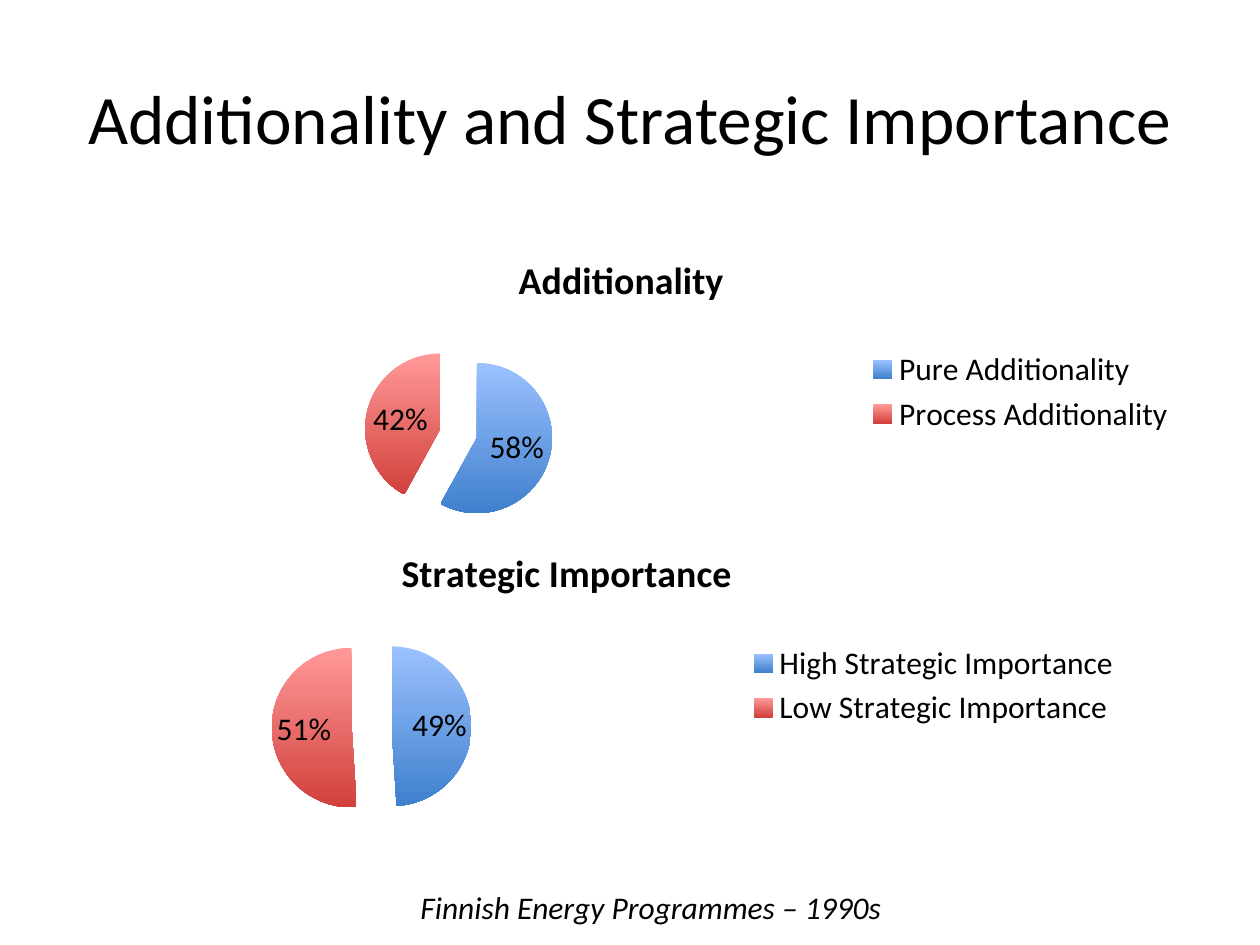
from lxml.etree import Element
from pptx import Presentation
from pptx.chart.data import CategoryChartData
from pptx.dml.color import RGBColor
from pptx.enum.chart import XL_CHART_TYPE, XL_LABEL_POSITION, XL_LEGEND_POSITION
from pptx.enum.text import MSO_ANCHOR, PP_ALIGN
from pptx.oxml.ns import qn
from pptx.util import Pt

FONT = "Calibri"
BLACK = RGBColor(0x00, 0x00, 0x00)
SLICE_GRADIENTS = [
    (RGBColor(0x9B, 0xC1, 0xFF), RGBColor(0x3F, 0x80, 0xCD)),
    (RGBColor(0xFF, 0x9A, 0x99), RGBColor(0xD1, 0x40, 0x3C)),
]
CHART_WIDTH, CHART_HEIGHT = Pt(648), Pt(181.4)


def style_font(font, size, bold=False, italic=False):
    font.name, font.size = FONT, Pt(size)
    font.bold, font.italic = bold, italic
    font.color.rgb = BLACK


def add_centred_text(slide, text, left, top, width, height, size,
                     italic=False, wrap=True, anchor=MSO_ANCHOR.TOP):
    frame = slide.shapes.add_textbox(Pt(left), Pt(top), Pt(width), Pt(height)).text_frame
    frame.word_wrap = wrap
    frame.vertical_anchor = anchor
    frame.text = text
    paragraph = frame.paragraphs[0]
    paragraph.alignment = PP_ALIGN.CENTER
    style_font(paragraph.runs[0].font, size, italic=italic)


def explode_slices(series, percent):
    """Pull all slices of a pie away from its centre."""
    explosion = Element(qn("c:explosion"), val=str(percent))
    series._element.find(qn("c:dPt")).addprevious(explosion)


def add_share_pie(slide, title, shares, left, top):
    share_data = CategoryChartData(number_format="0%")
    share_data.categories = list(shares)
    share_data.add_series(title, list(shares.values()))
    chart = slide.shapes.add_chart(XL_CHART_TYPE.PIE, Pt(left), Pt(top),
                                   CHART_WIDTH, CHART_HEIGHT, share_data).chart
    style_font(chart.font, 18)

    chart.has_title = True
    chart.chart_title.include_in_layout = False
    heading = chart.chart_title.text_frame
    heading.text = title
    style_font(heading.paragraphs[0].runs[0].font, 21.6, bold=True)

    chart.has_legend = True
    chart.legend.position = XL_LEGEND_POSITION.RIGHT
    chart.legend.include_in_layout = False

    plot = chart.plots[0]
    plot.vary_by_categories = True
    plot.has_data_labels = True
    labels = plot.data_labels
    labels.show_value, labels.show_percentage = True, False
    labels.number_format, labels.number_format_is_linked = "0%", False
    labels.position = XL_LABEL_POSITION.BEST_FIT

    series = plot.series[0]
    for index, gradient in enumerate(SLICE_GRADIENTS):
        fill = series.points[index].format.fill
        fill.gradient()
        fill.gradient_angle = 270
        for stop, colour in zip(fill.gradient_stops, gradient):
            stop.color.rgb = colour
    explode_slices(series, 25)


def main():
    presentation = Presentation()
    presentation.slide_width, presentation.slide_height = Pt(720), Pt(540)
    slide = presentation.slides.add_slide(presentation.slide_layouts[6])

    add_centred_text(slide, "Additionality and Strategic Importance",
                     36, 21.6, 648, 90, 39.6, anchor=MSO_ANCHOR.MIDDLE)
    add_share_pie(slide, "Additionality",
                  {"Pure Additionality": 0.58, "Process Additionality": 0.42}, 31, 133.2)
    add_share_pie(slide, "Strategic Importance",
                  {"High Strategic Importance": 0.49, "Low Strategic Importance": 0.51}, 0, 301)
    add_centred_text(slide, "Finnish Energy Programmes – 1990s",
                     213, 504, 318, 29, 18, italic=True, wrap=False)

    presentation.save("out.pptx")


if __name__ == "__main__":
    main()
